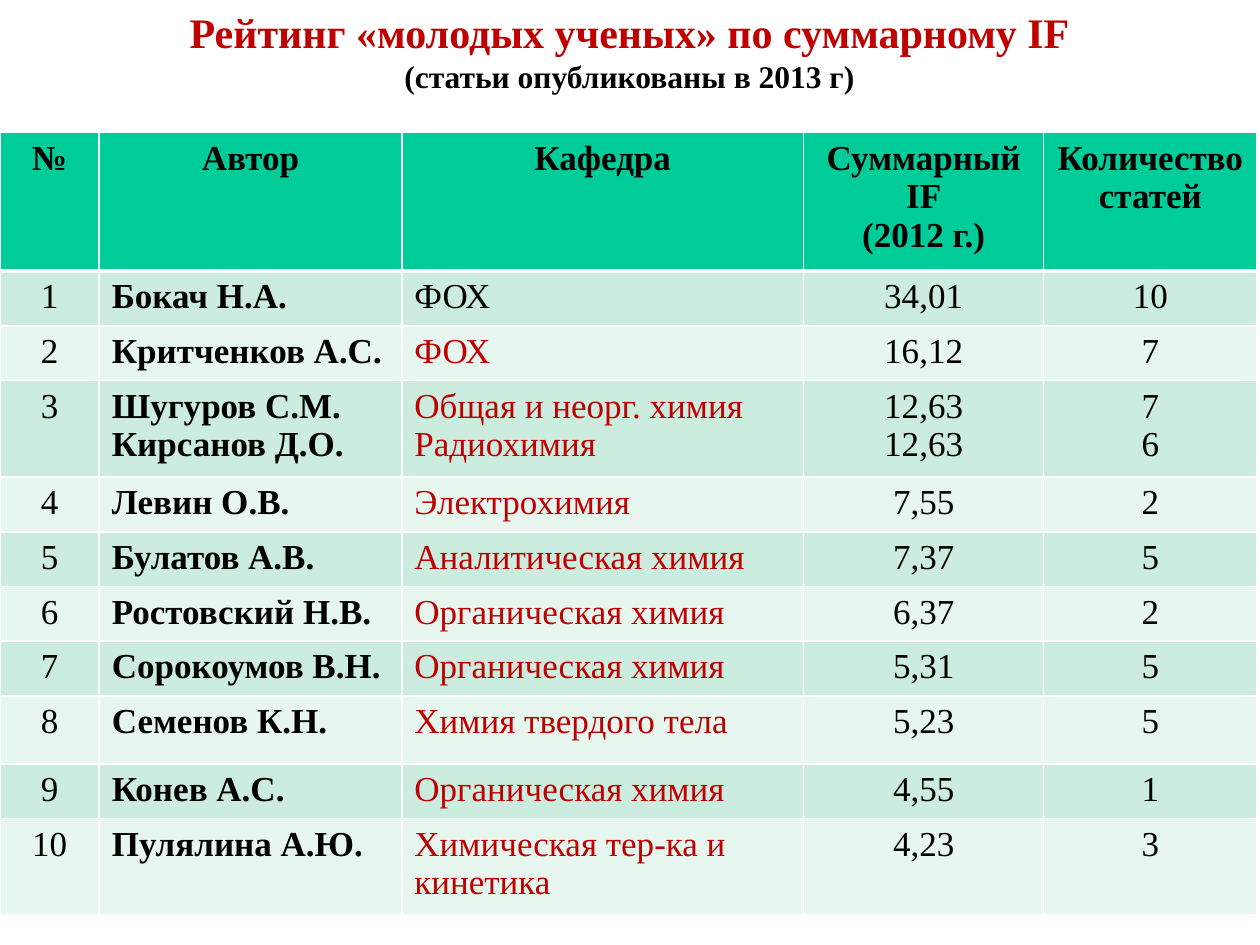
from lxml.etree import SubElement
from pptx import Presentation
from pptx.dml.color import RGBColor
from pptx.enum.text import PP_ALIGN
from pptx.oxml.ns import qn
from pptx.util import Cm, Pt

FONT = "Times New Roman"
RED, BLACK, WHITE = "C00000", "000000", "FFFFFF"
HEADER_FILL, BANDS = "00CC99", ("CBECDE", "E7F6EF")

COLUMN_WIDTHS = (2, 6.1, 8.1, 4.84, 4.3)
HEADER_HEIGHT, ROW_HEIGHT = 2.77, 1.1
TALL_ROWS = {3: 1.95, 8: 1.37, 10: 1.93}

HEADERS = ("№", "Автор", "Кафедра", "Суммарный IF\n(2012 г.)", "Количество статей")
AUTHORS = (
    ("Бокач Н.А.", "ФОХ", "34,01", "10"),
    ("Критченков А.С.", "ФОХ", "16,12", "7"),
    ("Шугуров С.М.\nКирсанов Д.О.", "Общая и неорг. химия\nРадиохимия",
     "12,63\n12,63", "7\n6"),
    ("Левин О.В.", "Электрохимия", "7,55", "2"),
    ("Булатов А.В.", "Аналитическая химия", "7,37", "5"),
    ("Ростовский Н.В.", "Органическая химия", "6,37", "2"),
    ("Сорокоумов В.Н.", "Органическая химия", "5,31", "5"),
    ("Семенов К.Н.", "Химия твердого тела", "5,23", "5"),
    ("Конев А.С.", "Органическая химия", "4,55", "1"),
    ("Пулялина А.Ю.", "Химическая тер-ка и кинетика", "4,23", "3"),
)


def rgb(color):
    return RGBColor.from_string(color)


def style(p, size, color, bold, align):
    p.alignment = align
    p.font.name = FONT
    p.font.size = Pt(size)
    p.font.bold = bold
    p.font.color.rgb = rgb(color)


def set_borders(cell, top, bottom):
    """White borders, widths in points; they must precede the cell's fill."""
    tcPr = cell._tc.get_or_add_tcPr()
    for tag, width in (("lnL", 1), ("lnR", 1), ("lnT", top), ("lnB", bottom)):
        ln = SubElement(tcPr, qn(f"a:{tag}"), w=str(Pt(width)))
        fill = SubElement(ln, qn("a:solidFill"))
        SubElement(fill, qn("a:srgbClr"), val=WHITE)


def fill_cell(cell, text, fill, color, bold, align, top=1, bottom=1):
    set_borders(cell, top, bottom)
    cell.fill.solid()
    cell.fill.fore_color.rgb = rgb(fill)
    cell.text = text
    for p in cell.text_frame.paragraphs:
        style(p, 20, color, bold, align)


def add_title(slide, left, top, width, height):
    tf = slide.shapes.add_textbox(Cm(left), Cm(top), Cm(width), Cm(height)).text_frame
    tf.word_wrap = True
    tf.text = "Рейтинг «молодых ученых» по суммарному IF\n(статьи опубликованы в 2013 г)"
    for p, size, color in zip(tf.paragraphs, (24, 18), (RED, BLACK)):
        style(p, size, color, True, PP_ALIGN.CENTER)


def add_rating_table(slide, left, top):
    heights = [HEADER_HEIGHT] + [TALL_ROWS.get(n, ROW_HEIGHT)
                                 for n in range(1, len(AUTHORS) + 1)]
    table = slide.shapes.add_table(
        len(heights), len(COLUMN_WIDTHS), Cm(left), Cm(top),
        Cm(sum(COLUMN_WIDTHS)), Cm(sum(heights))).table
    for column, width in zip(table.columns, COLUMN_WIDTHS):
        column.width = Cm(width)
    for row, height in zip(table.rows, heights):
        row.height = Cm(height)

    # Header row, with a thick line below
    for c, text in enumerate(HEADERS):
        fill_cell(table.cell(0, c), text, HEADER_FILL, BLACK, True,
                  PP_ALIGN.CENTER, bottom=3)

    # Numbered author rows; departments are red after the first place
    for n, author in enumerate(AUTHORS, 1):
        for c, text in enumerate((str(n), *author)):
            fill_cell(table.cell(n, c), text, BANDS[(n - 1) % 2],
                      RED if c == 2 and n > 1 else BLACK, c == 1,
                      PP_ALIGN.LEFT if c in (1, 2) else PP_ALIGN.CENTER,
                      top=3 if n == 1 else 1)


def main():
    prs = Presentation()
    prs.slide_width, prs.slide_height = Cm(25.4), Cm(19.05)
    slide = prs.slides.add_slide(prs.slide_layouts[6])
    add_title(slide, 0.69, 0, 24, 3.56)
    add_rating_table(slide, 0, 2.67)
    prs.save("out.pptx")


if __name__ == "__main__":
    main()
